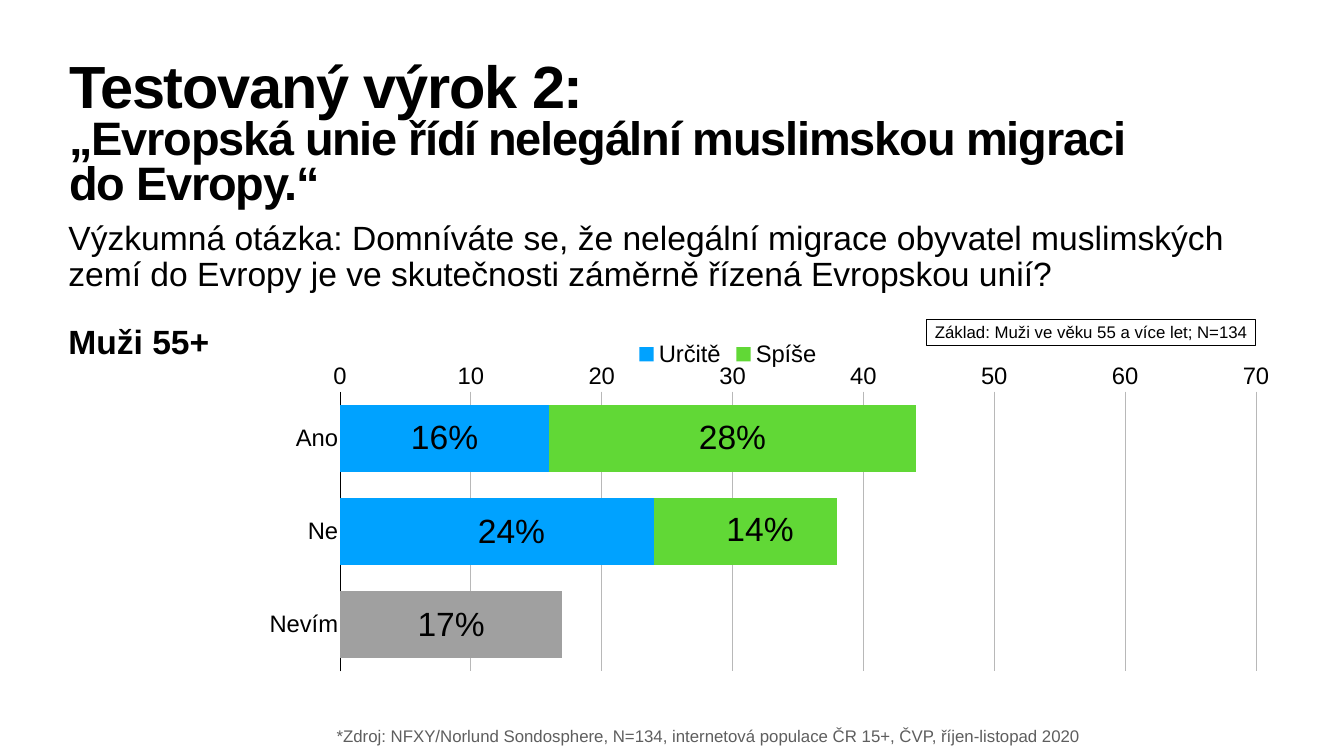
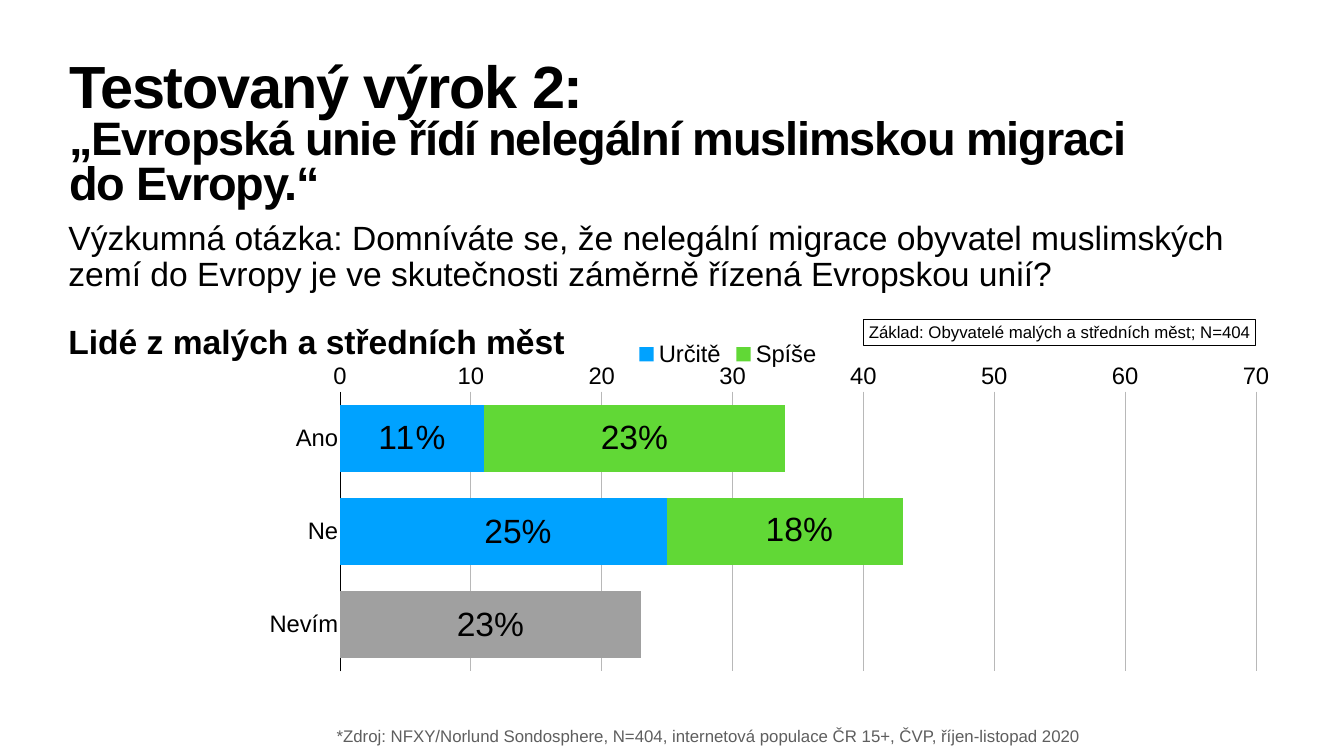
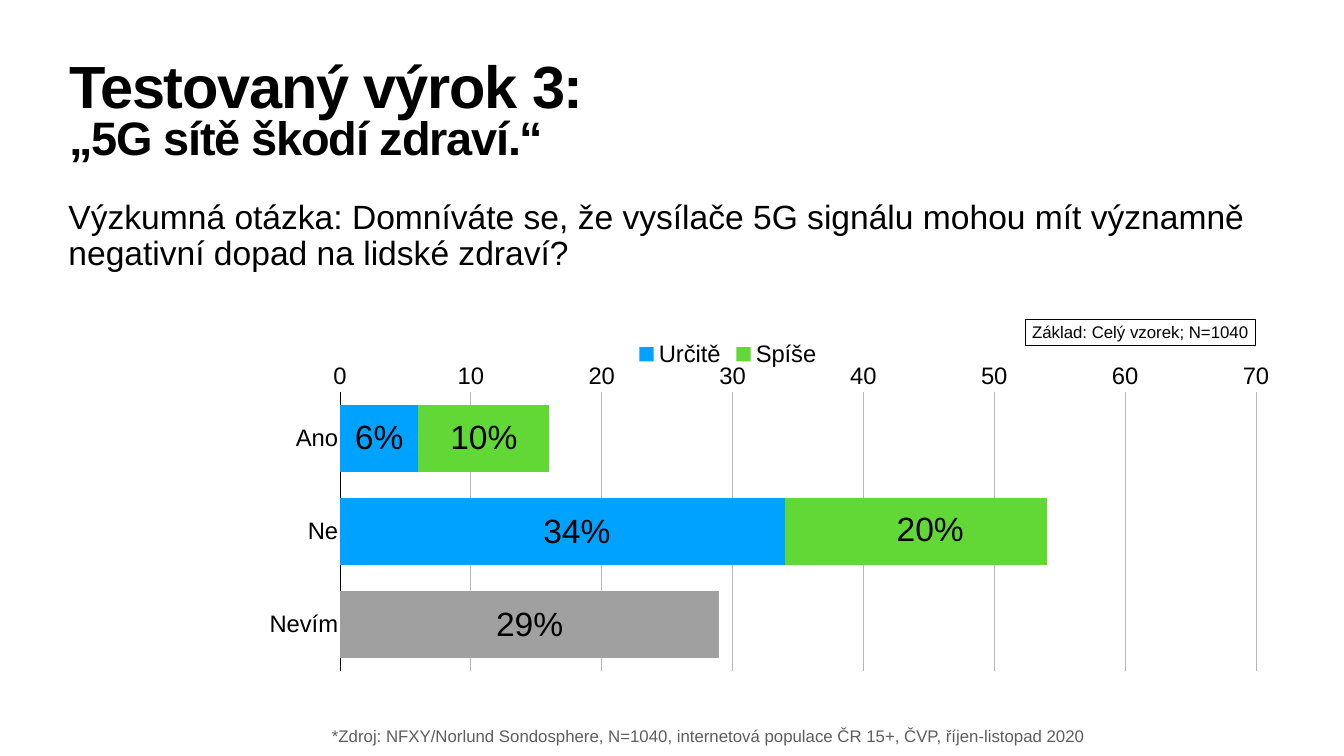
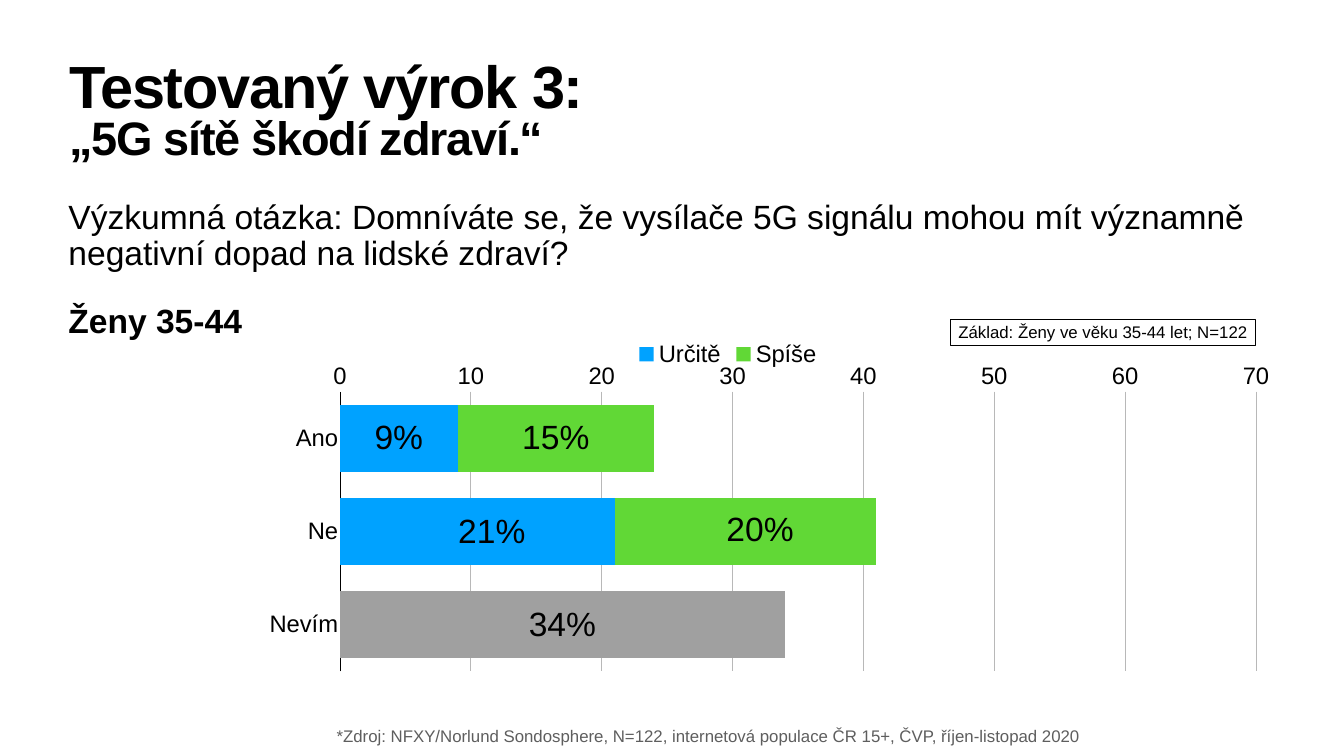
from dataclasses import dataclass

from pptx import Presentation
from pptx import util as u
from pptx.chart.data import CategoryChartData
from pptx.dml.color import RGBColor
from pptx.enum import chart as ch, shapes, text
from pptx.oxml import parse_xml
from pptx.oxml.ns import nsdecls

Cm, Pt = u.Cm, u.Pt


@dataclass(frozen=True)
class Theme:
    font: str = "Arial"
    black: RGBColor = RGBColor(0, 0, 0)
    grey: RGBColor = RGBColor(0x5E, 0x5E, 0x5E)
    grid: RGBColor = RGBColor(0xB8, 0xB8, 0xB8)
    blue: RGBColor = RGBColor(0x00, 0xA2, 0xFF)
    green: RGBColor = RGBColor(0x61, 0xD8, 0x36)
    mute: RGBColor = RGBColor(0xA0, 0xA0, 0xA0)
    head: float = 85
    claim: float = 67
    body: float = 48
    axis: float = 34
    note: float = 24
    track: str = "-170"
    inset: float = 0.15


ANSWERS = ["Ano", "Ne", "Nevím"]
PERCENT = '#,##0"%"'
LEFT, RIGHT, WIDE = 3.3, 63.27, 61.04


def put(obj, **vals):
    for name, val in vals.items():
        setattr(obj, name, val)


def place(obj, left, top, width, height):
    put(obj, left=Cm(left), top=Cm(top), width=Cm(width), height=Cm(height))


def layout(parts):
    """Make a manual chart layout from tag and value pairs."""
    inner = "".join(f'<c:{tag} val="{val}"/>' for tag, val in parts.items())
    return parse_xml(f"<c:layout {nsdecls('c')}><c:manualLayout>{inner}"
                     "</c:manualLayout></c:layout>")


class Deck:
    def __init__(self, theme):
        self.theme = theme
        self.prs = Presentation()
        put(self.prs, slide_width=Cm(67.74), slide_height=Cm(38.1))
        self.slide = None

    def style(self, font, size, color=None, bold=False):
        put(font, name=self.theme.font, size=Pt(size), bold=bold)
        font.color.rgb = color or self.theme.black

    def frame(self, shape, anchor=text.MSO_ANCHOR.TOP, wrap=True):
        frame, pad = shape.text_frame, Cm(self.theme.inset)
        put(frame, word_wrap=wrap, auto_size=text.MSO_AUTO_SIZE.NONE,
            vertical_anchor=anchor, margin_left=pad, margin_right=pad,
            margin_top=pad, margin_bottom=pad)
        return frame

    def words(self, par, words, size, **look):
        run = par.add_run()
        run.text = words
        self.style(run.font, size, **look)
        return run

    def title(self, head, claim):
        t = self.theme
        self.slide = self.prs.slides.add_slide(self.prs.slide_layouts[5])
        shape = self.slide.shapes.title
        place(shape, 3.35, 3, 62.76, 8.03)
        par = self.frame(shape).paragraphs[0]
        put(par, alignment=text.PP_ALIGN.LEFT, line_spacing=0.8)
        lines = [(head, t.head)] + [(line, t.claim) for line in claim]
        for i, (line, size) in enumerate(lines):
            if i:
                par.add_line_break()
            run = self.words(par, line, size, bold=True)
            run.font._element.set("spc", t.track)

    def body(self, top, query, group):
        box = self.slide.shapes.add_textbox(0, 0, 0, 0)
        place(box, LEFT, top, WIDE, 32.89 - top)
        frame = self.frame(box)
        for i, words in enumerate(filter(None, [query, group])):
            par = frame.add_paragraph() if i else frame.paragraphs[0]
            put(par, line_spacing=0.9, space_before=Pt(45))
            self.words(par, words, self.theme.body, bold=i > 0)

    def base(self, words, width):
        """Add the framed sample note, flush with the right edge."""
        box = self.slide.shapes.add_shape(shapes.MSO_SHAPE.RECTANGLE, 0, 0, 0, 0)
        place(box, RIGHT - width, 16.08, width, 1.32)
        box.shadow.inherit = False
        box.fill.background()
        box.line.color.rgb = self.theme.black
        box.line.width = Pt(1)
        par = self.frame(box, text.MSO_ANCHOR.MIDDLE, False).paragraphs[0]
        par.alignment = text.PP_ALIGN.CENTER
        self.words(par, words, self.theme.note)

    def source(self, count):
        box = self.slide.shapes.add_textbox(0, 0, 0, 0)
        place(box, 16.03, 36.42, 39.32, 1.27)
        par = self.frame(box).paragraphs[0]
        par.alignment = text.PP_ALIGN.CENTER
        self.words(par, f"*Zdroj: NFXY/Norlund Sondosphere, N={count}, internetová "
                   "populace ČR 15+, ČVP, říjen-listopad 2020",
                   self.theme.note, color=self.theme.grey)

    def chart(self, sure, rather):
        t = self.theme
        data = CategoryChartData(number_format="General")
        data.categories = ANSWERS
        data.add_series("Určitě", sure)
        data.add_series("Spíše", rather)
        chart = self.slide.shapes.add_chart(
            ch.XL_CHART_TYPE.BAR_STACKED, Cm(3.35), Cm(16.15), Cm(60.99),
            Cm(19.81), data).chart
        put(chart, has_title=False, has_legend=True)
        self.style(chart.font, 10, t.grey)
        put(chart.legend, position=ch.XL_LEGEND_POSITION.TOP, include_in_layout=True)
        self.style(chart.legend.font, t.axis)
        self.axes(chart)

        plot = chart.plots[0]
        put(plot, gap_width=40, overlap=100, vary_by_categories=False)
        for bars, color, lift in zip(plot.series, (t.blue, t.green), (0, -0.005)):
            self.bars(bars, color, lift)
        gray = plot.series[0].points[2].format.fill
        gray.solid()
        gray.fore_color.rgb = t.mute

        area = chart.element.xpath("c:chart/c:plotArea")[0]
        for old in chart.element.xpath("c:chart/c:plotArea/c:layout|c:chart/c:legend/c:layout"):
            old.getparent().remove(old)
        area.insert(0, layout(dict(layoutTarget="inner", xMode="edge", yMode="edge",
                                   x=0.226, y=0.181, w=0.757, h=0.712)))
        spot = chart.element.xpath("c:chart/c:legend/c:legendPos")[0]
        spot.addnext(layout(dict(xMode="edge", yMode="edge", x=0.467, y=0.04)))

    def axes(self, chart):
        t, none = self.theme, ch.XL_TICK_MARK.NONE
        cat, val = chart.category_axis, chart.value_axis
        for axis in (cat, val):
            put(axis, major_tick_mark=none, minor_tick_mark=none)
            self.style(axis.tick_labels.font, t.axis)
        put(cat, reverse_order=True, crosses=ch.XL_AXIS_CROSSES.MAXIMUM)
        put(val, minimum_scale=0, maximum_scale=70, major_unit=10,
            has_major_gridlines=True)
        put(val.tick_labels, number_format="#,##0", number_format_is_linked=False)
        val.format.line.fill.background()
        for line, color in ((cat.format.line, t.black),
                            (val.major_gridlines.format.line, t.grid)):
            line.color.rgb = color
            line.width = Pt(1)

    def bars(self, bars, color, lift):
        """Colour one series and label it; the middle label sits off centre."""
        mid = ch.XL_LABEL_POSITION.CENTER
        bars.invert_if_negative = False
        bars.format.fill.solid()
        bars.format.fill.fore_color.rgb = color
        put(bars.data_labels, show_value=True, position=mid,
            number_format=PERCENT, number_format_is_linked=False)
        self.style(bars.data_labels.font, self.theme.body)
        label = bars.points[1].data_label
        self.style(label.font, self.theme.body)
        label.position = mid
        idx = bars.data_labels._element.xpath("c:dLbl/c:idx")[0]
        form = parse_xml(f"<c:numFmt {nsdecls('c')} sourceLinked='0'/>")
        form.set("formatCode", PERCENT)
        idx.addnext(form)
        idx.addnext(layout(dict(x=0.012, y=lift)))


MIGRANTS = dict(
    head="Testovaný výrok 2:", top=11.02,
    claim=["„Evropská unie řídí nelegální muslimskou migraci ", "do Evropy.“"],
    query="Výzkumná otázka: Domníváte se, že nelegální migrace obyvatel muslimských "
          "zemí do Evropy je ve skutečnosti záměrně řízená Evropskou unií?")
SIGNAL = dict(
    head="Testovaný výrok 3:", top=9.96, claim=["„5G sítě škodí zdraví.“"],
    query="Výzkumná otázka: Domníváte se, že vysílače 5G signálu mohou mít významně "
          "negativní dopad na lidské zdraví?")

# topic, group, base, base width, count, sure, rather
PAGES = [
    (MIGRANTS, "Muži 55+", "Muži ve věku 55 a více let", 16.56, 134,
     (16, 24, 17), (28, 14, None)),
    (MIGRANTS, "Lidé z malých a středních měst", "Obyvatelé malých a středních měst",
     19.74, 404, (11, 25, 23), (23, 18, None)),
    (SIGNAL, None, "Celý vzorek", 11.61, 1040, (6, 34, 29), (10, 20, None)),
    (SIGNAL, "Ženy 35-44", "Ženy ve věku 35-44 let", 15.37, 122,
     (9, 21, 34), (15, 20, None)),
]


def main():
    deck = Deck(Theme())
    for topic, group, base, width, count, sure, rather in PAGES:
        deck.title(topic["head"], topic["claim"])
        deck.chart(sure, rather)
        deck.base(f"Základ: {base}; N={count}", width)
        deck.source(count)
        deck.body(topic["top"], topic["query"], group)
    deck.prs.save("out.pptx")


if __name__ == "__main__":
    main()
